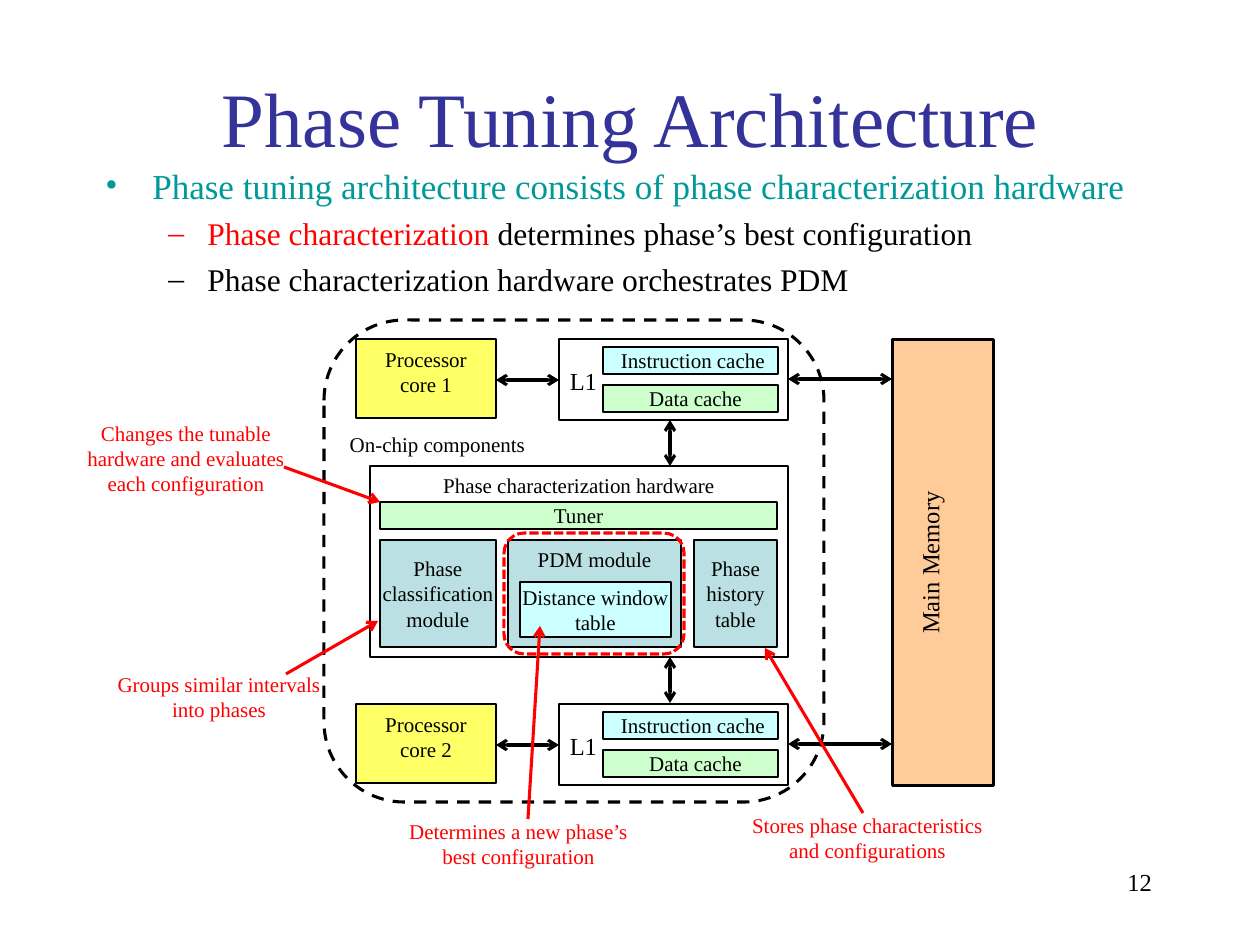
from lxml import etree
from pptx import Presentation
from pptx.dml.color import RGBColor
from pptx.enum.dml import MSO_LINE
from pptx.enum.shapes import MSO_CONNECTOR, MSO_SHAPE
from pptx.enum.text import MSO_ANCHOR, PP_ALIGN
from pptx.oxml.ns import qn
from pptx.util import Emu, Pt

PX = 914400 / 126
FONT = "Times New Roman"
RECT, ROUND = MSO_SHAPE.RECTANGLE, MSO_SHAPE.ROUNDED_RECTANGLE
TOP, MIDDLE = MSO_ANCHOR.TOP, MSO_ANCHOR.MIDDLE
LEFT, CENTER, RIGHT = PP_ALIGN.LEFT, PP_ALIGN.CENTER, PP_ALIGN.RIGHT
DASH, SYS_DASH = MSO_LINE.DASH, MSO_LINE.SQUARE_DOT

BLACK, RED, BLUE, TEAL = "000000", "FF0000", "333399", "009999"
YELLOW, ORANGE, GREEN = "FFFF66", "FFCC99", "CCFFCC"
CYAN, STEEL = "CCFFFF", "BBE0E3"
CORE_PITCH = 365


def px(v):
    return Emu(round(v * PX))


def rgb(value):
    return RGBColor.from_string(value)


def add_run(p, text, size=12, color=BLACK):
    r = p.add_run()
    r.text = text
    r.font.name, r.font.size = FONT, Pt(size)
    r.font.color.rgb = rgb(color)


def write(sp, text, size=12, color=BLACK, align=CENTER, anchor=MIDDLE,
          wrap=False, insets=(0, 0, 0, 0)):
    """Fill a shape with one paragraph per line; insets are left, top, right, bottom."""
    tf = sp.text_frame
    tf.word_wrap, tf.vertical_anchor = wrap, anchor
    (tf.margin_left, tf.margin_top,
     tf.margin_right, tf.margin_bottom) = map(px, insets)
    for i, line in enumerate(text.split("\n")):
        p = tf.add_paragraph() if i else tf.paragraphs[0]
        p.alignment = align
        add_run(p, line, size, color)


def add_label(s, box, text, **fmt):
    write(s.shapes.add_textbox(*map(px, box)), text, **fmt)


def add_box(s, box, text="", fill=None, line=BLACK, width=1.5, dash=None,
            shape=RECT, **fmt):
    sp = s.shapes.add_shape(shape, *map(px, box))
    sp.shadow.inherit = False
    if fill:
        sp.fill.solid()
        sp.fill.fore_color.rgb = rgb(fill)
    else:
        sp.fill.background()
    sp.line.color.rgb = rgb(line)
    sp.line.width = Pt(width)
    if dash:
        sp.line.dash_style = dash
    if text:
        write(sp, text, **fmt)
    return sp


def add_arrow(s, start, end, color=BLACK, both=True):
    c = s.shapes.add_connector(MSO_CONNECTOR.STRAIGHT, *map(px, start + end))
    c.line.color.rgb = rgb(color)
    c.line.width = Pt(1.75)
    ln = c.line._get_or_add_ln()
    for tag in ("a:headEnd", "a:tailEnd") if both else ("a:tailEnd",):
        etree.SubElement(ln, qn(tag), type="arrow")
    etree.SubElement(c._element.spPr, qn("a:effectLst"))


def add_bullets(s, box, items):
    """Each item is (level, mark, left margin, hanging indent, size, runs)."""
    tf = s.shapes.add_textbox(*map(px, box)).text_frame
    tf.word_wrap = True
    for i, (level, mark, margin, hang, size, runs) in enumerate(items):
        p = tf.add_paragraph() if i else tf.paragraphs[0]
        p.level, p.alignment = level, LEFT
        if i:
            p.space_before = Pt(4.5)
        pPr = p._p.get_or_add_pPr()
        pPr.set("marL", str(px(margin)))
        pPr.set("indent", str(-px(hang)))
        etree.SubElement(pPr, qn("a:buFont"), typeface=FONT)
        etree.SubElement(pPr, qn("a:buChar"), char=mark)
        for text, color in runs:
            add_run(p, text, size, color)


def add_core(s, number):
    """Draw a processor core, its L1 caches and the arrows between them."""
    y = 339 + (number - 1) * CORE_PITCH
    add_box(s, (356, y, 140, 79), f"Processor\ncore {number}", fill=YELLOW,
            insets=(0, 0, 0, 14))
    add_box(s, (559, y, 229, 81))
    add_label(s, (557, y + 20, 53, 43), "L1", size=14)
    add_box(s, (603, y + 8, 175, 27), "Instruction cache", fill=CYAN,
            insets=(5, 0, 0, 0))
    add_box(s, (603, y + 46, 175, 27), "Data cache", fill=GREEN,
            insets=(10, 0, 0, 0))
    add_arrow(s, (559, y + 41), (496, y + 41))
    add_arrow(s, (788, y + 40), (892, y + 40))


def add_phase_hardware(s):
    add_box(s, (370, 466, 418, 191), "Phase characterization hardware",
            anchor=TOP, insets=(0, 7, 0, 0))
    add_box(s, (380, 502, 397, 27), "Tuner", fill=GREEN)
    add_box(s, (380, 540, 116, 107), "Phase\nclassification\nmodule", fill=STEEL)
    add_box(s, (508, 540, 173, 107), "PDM module", fill=STEEL,
            anchor=TOP, insets=(0, 6, 0, 0))
    add_box(s, (520, 582, 151, 55), "Distance window\ntable", fill=CYAN)
    add_box(s, (694, 540, 83, 107), "Phase\nhistory\ntable", fill=STEEL)
    for y in (420, 657):
        add_arrow(s, (670, y), (670, y + 46))


def add_callout(s, box, text, start, end):
    add_label(s, box, text, color=RED)
    add_arrow(s, start, end, color=RED, both=False)


def main():
    prs = Presentation()
    prs.slide_width, prs.slide_height = px(1260), px(945)
    s = prs.slides.add_slide(prs.slide_layouts[6])

    add_label(s, (95, 38, 1071, 158), "Phase Tuning Architecture",
              size=44, color=BLUE, wrap=True)
    add_bullets(s, (93, 158, 1071, 137), [
        (0, "•", 47, 47, 20,
         [("Phase tuning architecture consists of phase characterization hardware", TEAL)]),
        (1, "–", 102, 39, 18,
         [("Phase characterization", RED),
          (" determines phase’s best configuration", BLACK)]),
        (1, "–", 102, 39, 18,
         [("Phase characterization hardware orchestrates PDM", BLACK)]),
    ])

    memory = add_box(s, (720, 512, 446, 101), "Main Memory", fill=ORANGE,
                     size=14, insets=(0, 0, 0, 27))
    memory.rotation = 270
    for number in (1, 2):
        add_core(s, number)
    add_phase_hardware(s)
    add_box(s, (324, 320, 500, 482), shape=ROUND, width=1.75, dash=DASH)
    add_label(s, (336, 425, 203, 38), "On-chip components")
    add_box(s, (504, 533, 180, 121), shape=ROUND, line=RED, width=1.75,
            dash=SYS_DASH)

    add_callout(s, (102, 665, 234, 63), "Groups similar intervals\ninto phases",
                (286, 674), (378, 621))
    add_callout(s, (74, 413, 224, 90),
                "Changes the tunable\nhardware and evaluates\neach configuration",
                (284, 467), (380, 502))
    add_callout(s, (738, 806, 259, 63),
                "Stores phase characteristics\nand configurations",
                (863, 813), (765, 648))
    add_callout(s, (395, 812, 247, 63),
                "Determines a new phase’s\nbest configuration",
                (528, 819), (540, 626))
    add_label(s, (903, 861, 262, 63), "12", size=14, align=RIGHT, anchor=TOP,
              wrap=True, insets=(13, 6, 13, 6))
    prs.save("out.pptx")


if __name__ == "__main__":
    main()
